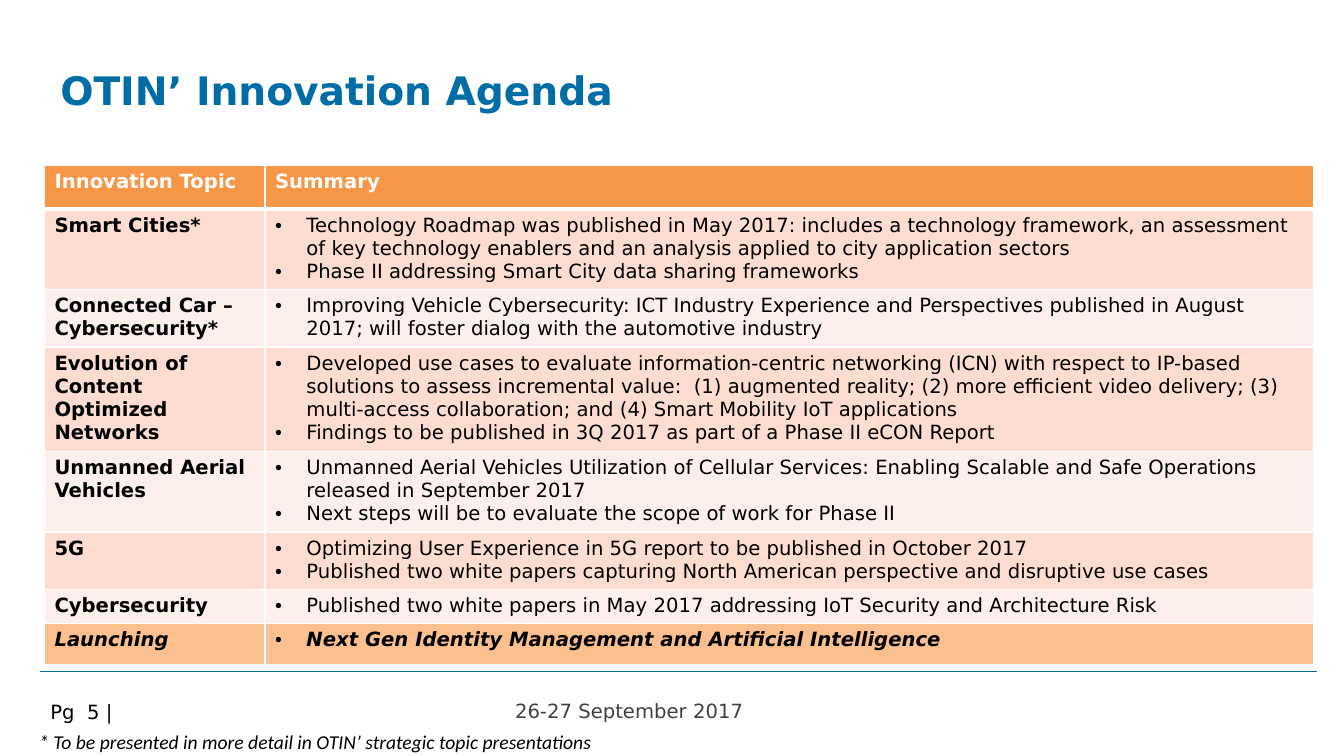
import dataclasses

import lxml.etree
import pptx
import pptx.dml.color
import pptx.enum.shapes
import pptx.oxml
import pptx.oxml.ns
import pptx.util

Cm = pptx.util.Cm


@dataclasses.dataclass(frozen=True)
class Theme:
    font: str = "DejaVu Sans"
    note_font: str = "Calibri"
    title_size: int = 28
    body_size: int = 14
    blue: str = "006DA7"
    grey: str = "404040"
    black: str = "000000"
    white: str = "FFFFFF"
    header: str = "F79646"
    bands: tuple = ("FCDDCF", "FDEFE9")
    launch: str = "FAC090"


THEME = Theme()
HEADINGS = ("Innovation Topic", ["Summary"])
TOPICS = [
    ("Smart Cities*", [
        "Technology Roadmap was published in May 2017: includes a technology framework, an assessment "
        "of key technology enablers and an analysis applied to city application sectors",
        "Phase II addressing Smart City data sharing frameworks"]),
    ("Connected Car – Cybersecurity*", [
        "Improving Vehicle Cybersecurity: ICT Industry Experience and Perspectives published in August "
        "2017; will foster dialog with the automotive industry"]),
    ("Evolution of Content Optimized Networks", [
        "Developed use cases to evaluate information-centric networking (ICN) with respect to IP-based "
        "solutions to assess incremental value:  (1) augmented reality; (2) more efficient video delivery; "
        "(3) multi-access collaboration; and (4) Smart Mobility IoT applications",
        "Findings to be published in 3Q 2017 as part of a Phase II eCON Report"]),
    ("Unmanned Aerial Vehicles", [
        "Unmanned Aerial Vehicles Utilization of Cellular Services: Enabling Scalable and Safe Operations "
        "released in September 2017",
        "Next steps will be to evaluate the scope of work for Phase II"]),
    ("5G", [
        "Optimizing User Experience in 5G report to be published in October 2017",
        "Published two white papers capturing North American perspective and disruptive use cases"]),
    ("Cybersecurity", [
        "Published two white papers in May 2017 addressing IoT Security and Architecture Risk"]),
]
LAUNCHING = ("Launching", ["Next Gen Identity Management and Artificial Intelligence"])
COLUMN_WIDTHS = (5.56, 26.42)
ROW_HEIGHTS = (1.09, 2.03, 1.45, 2.62, 2.03, 1.45, 0.84, 1.04)


def color(value):
    return pptx.dml.color.RGBColor.from_string(value)


def add_child(parent, tag, **attributes):
    return lxml.etree.SubElement(parent, pptx.oxml.ns.qn(tag), attributes)


def write(para, text, size=THEME.body_size, font=THEME.font, ink=THEME.black,
          bold=False, italic=False, hanging=0, bullet=False):
    if hanging:
        properties = para._p.get_or_add_pPr()
        properties.set("marL", str(Cm(hanging)))
        properties.set("indent", str(-Cm(hanging)))
        if bullet:
            add_child(properties, "a:buFont", typeface="Arial")
            add_child(properties, "a:buChar", char="•")
    span = para.add_run()
    span.text = text
    span.font.name = font
    span.font.size = pptx.util.Pt(size)
    span.font.bold = bold
    span.font.italic = italic
    span.font.color.rgb = color(ink)


def add_text(page, box, text, margins=(0.25, 0.13, 0.25, 0.13), spacing=None, after=None, **style):
    frame = page.shapes.add_textbox(*map(Cm, box)).text_frame
    frame.word_wrap = True
    frame.margin_left, frame.margin_top, frame.margin_right, frame.margin_bottom = map(Cm, margins)
    para = frame.paragraphs[0]
    write(para, text, **style)
    if spacing:
        para.line_spacing = spacing
    if after:
        para.space_after = pptx.util.Pt(after)


def border_cell(cell, widths):
    properties = cell._tc.get_or_add_tcPr()
    for side, width in zip("LRTB", widths):
        line = add_child(properties, f"a:ln{side}", w=str(pptx.util.Pt(width)))
        add_child(add_child(line, "a:solidFill"), "a:srgbClr", val=THEME.white)


def fill_cell(cell, texts, back, widths, **style):
    border_cell(cell, widths)
    cell.fill.solid()
    cell.fill.fore_color.rgb = color(back)
    frame = cell.text_frame
    for index, text in enumerate(texts):
        para = frame.add_paragraph() if index else frame.paragraphs[0]
        write(para, text, **style)


def add_agenda(page, left, top):
    rows = [HEADINGS, *TOPICS, LAUNCHING]
    last = len(rows) - 1
    table = page.shapes.add_table(len(rows), len(COLUMN_WIDTHS), Cm(left), Cm(top),
                                  Cm(sum(COLUMN_WIDTHS)), Cm(sum(ROW_HEIGHTS))).table
    for column, width in zip(table.columns, COLUMN_WIDTHS):
        column.width = Cm(width)
    for index, (topic, summary) in enumerate(rows):
        table.rows[index].height = Cm(ROW_HEIGHTS[index])
        heading, launching = index == 0, index == last
        if heading:
            back = THEME.header
        elif launching:
            back = THEME.launch
        else:
            back = THEME.bands[(index - 1) % 2]
        widths = (1, 1, 3 if index == 1 else 1, 3 if heading else 1)
        style = dict(ink=THEME.white if heading else THEME.black, italic=launching)
        fill_cell(table.cell(index, 0), [topic], back, widths, bold=True, **style)
        fill_cell(table.cell(index, 1), summary, back, widths, bold=heading or launching,
                  hanging=0 if heading else 0.79, bullet=not heading, **style)


def add_title(page, box):
    add_text(page, box, "OTIN’ Innovation Agenda", margins=(0, 0.05, 0, 0), spacing=0.94, after=14.2,
             size=THEME.title_size, ink=THEME.blue, bold=True, hanging=0.95)


def add_footer(page, left, top, width):
    rule = page.shapes.add_connector(pptx.enum.shapes.MSO_CONNECTOR.STRAIGHT,
                                     Cm(left), Cm(top), Cm(left + width), Cm(top))
    rule.line.color.rgb = color(THEME.blue)
    rule.line.width = pptx.util.Pt(0.75)
    add_child(rule._element.spPr, "a:effectLst")
    add_text(page, (left + 11.71, top + 0.56, 9.8, 0.86), "26-27 September 2017", ink=THEME.grey)
    add_text(page, (left, top + 0.64, 7.01, 0.99), "Pg  5 |", spacing=0.93)
    add_text(page, (left - 0.28, top + 1.35, 20.6, 0.86),
             "* To be presented in more detail in OTIN’ strategic topic presentations",
             font=THEME.note_font, italic=True)


def main():
    deck = pptx.Presentation()
    deck.slide_width, deck.slide_height = Cm(33.87), Cm(19.05)
    page = deck.slides.add_slide(deck.slide_layouts[6])
    add_title(page, (1.52, 1.73, 30.63, 1.8))
    add_agenda(page, 1.12, 4.17)
    add_footer(page, 1.02, 16.92, 32.16)
    deck.save("out.pptx")


if __name__ == "__main__":
    main()
